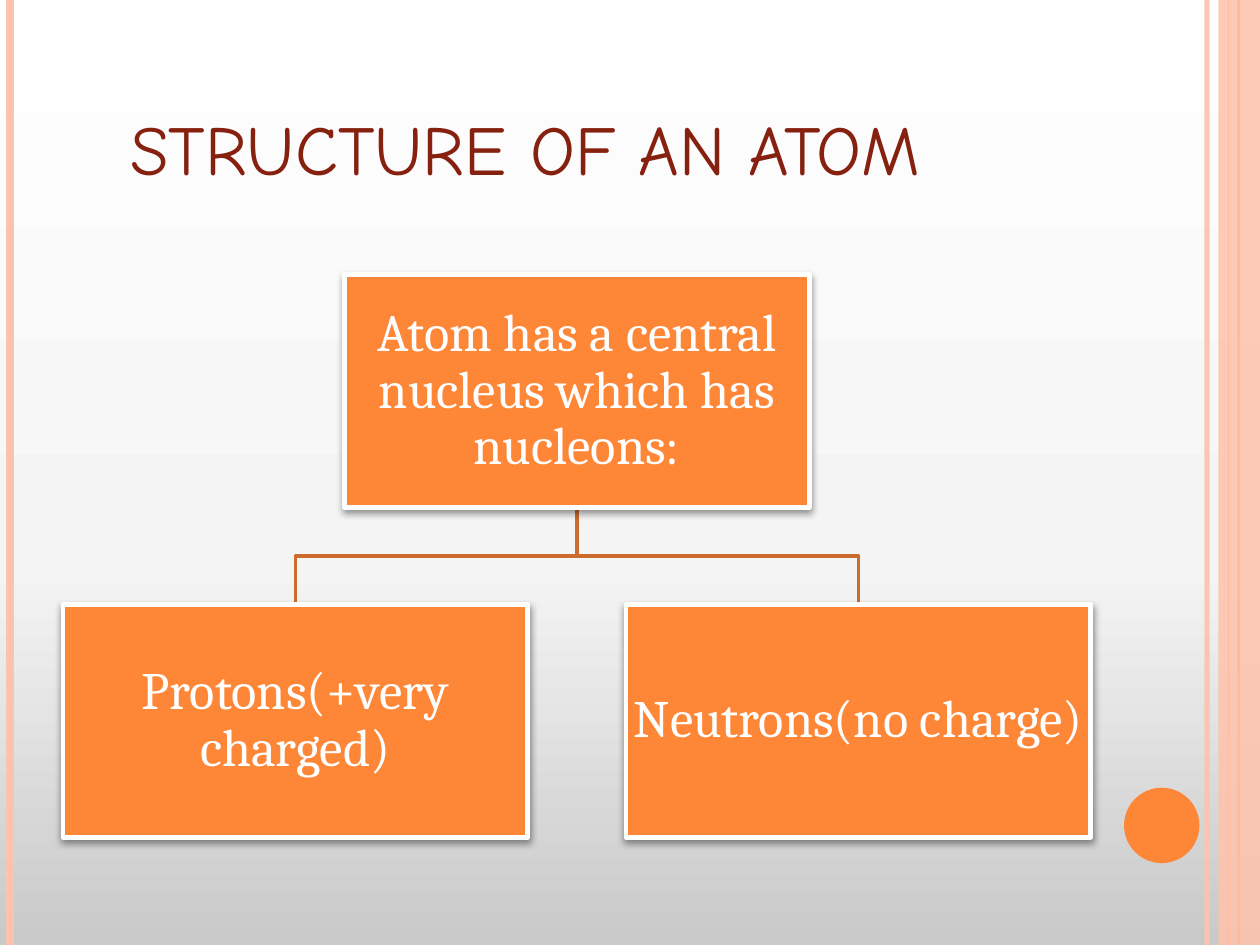
from lxml import etree
from pptx import Presentation, util as u
from pptx.dml.color import RGBColor
from pptx.enum import shapes, text
from pptx.oxml import parse_xml
from pptx.oxml.ns import qn

TITLE = "STRUCTURE OF AN ATOM"
ROOT = "Atom has a central nucleus which has nucleons:"
CHILDREN = ["Protons(+very charged)", "Neutrons(no charge)"]

THEME = {
    "accent": "FE8637", "pale": "FEC3AE", "link": "CB6B2C",
    "title": "862110", "white": "FFFFFF",
    "title_font": "Comic Neue", "body_font": "Cambria",
    "title_size": 40, "body_size": 30,
    "background": [(0, "C9C9C9"), (40, "F4F4F4"), (100, "FFFFFF")],
}
PAGE_W, PAGE_H = 25.4, 19.05
RULES = [(24.33, "pale", 3, 93), (0.2, "pale", 4.5, 100),
         (24.97, "accent", 1.5, 100), (24.77, "accent", 0.75, 100)]
BOX_W, BOX_H = 9.37, 4.69
LEFT, GAP = 1.27, 1.98
ROOT_TOP, CHILD_TOP = 5.54, 12.19
NS = 'xmlns:a="http://schemas.openxmlformats.org/drawingml/2006/main"'
SHADOW = (f'<a:effectLst {NS}><a:outerShdw blurRad="50800" dist="25400" '
          'dir="5400000" rotWithShape="0"><a:srgbClr val="000000">'
          '<a:alpha val="40000"/></a:srgbClr></a:outerShdw></a:effectLst>')


def rgb(name):
    return RGBColor.from_string(THEME[name])


def apply(obj, values):
    for name, value in values.items():
        setattr(obj, name, value)


def set_alpha(sp, percent):
    for color in sp._element.spPr.iter(qn("a:srgbClr")):
        etree.SubElement(color, qn("a:alpha"), val=str(percent * 1000))


def set_line(sp, color, width):
    sp.line.color.rgb = rgb(color)
    sp.line.width = u.Pt(width)


def set_background(s):
    fill = s.background.fill
    fill.gradient()
    fill.gradient_angle = 90
    stops = next(s._element.iter(qn("a:gsLst")))
    for stop in list(stops):
        stops.remove(stop)
    for pos, color in THEME["background"]:
        gs = etree.SubElement(stops, qn("a:gs"), pos=str(pos * 1000))
        etree.SubElement(gs, qn("a:srgbClr"), val=color)


def add_filled(s, kind, box, color):
    sp = s.shapes.add_shape(kind, *map(u.Cm, box))
    sp.shadow.inherit = False
    sp.fill.solid()
    sp.fill.fore_color.rgb = rgb(color)
    sp.line.fill.background()
    return sp


def add_decor(s):
    for x, color, width, alpha in RULES:
        sp = s.shapes.add_connector(shapes.MSO_CONNECTOR.STRAIGHT,
                                    u.Cm(x), 0, u.Cm(x), u.Cm(PAGE_H))
        set_line(sp, color, width)
        etree.SubElement(sp._element.spPr, qn("a:effectLst"))
        if alpha < 100:
            set_alpha(sp, alpha)
    band = add_filled(s, shapes.MSO_SHAPE.RECTANGLE,
                      (24.56, 0, PAGE_W - 24.56, PAGE_H), "pale")
    set_alpha(band, 87)
    add_filled(s, shapes.MSO_SHAPE.OVAL, (22.66, 15.88, 1.52, 1.52), "accent")


def set_text(sp, content, frame, para, font, color):
    tf = sp.text_frame
    apply(tf, {"word_wrap": True, "auto_size": text.MSO_AUTO_SIZE.NONE, **frame})
    p = tf.paragraphs[0]
    apply(p, para)
    r = p.add_run()
    r.text = content
    apply(r.font, font)
    r.font.color.rgb = rgb(color)
    return p


def add_title(s):
    sp = s.shapes.title
    apply(sp, dict(zip(("left", "top", "width", "height"),
                       map(u.Cm, (1.27, 0.76, 20.75, 3.18)))))
    p = set_text(sp, TITLE, {"vertical_anchor": text.MSO_ANCHOR.BOTTOM},
                 {"alignment": text.PP_ALIGN.LEFT},
                 {"name": THEME["title_font"], "size": u.Pt(THEME["title_size"])},
                 "title")
    apply_indent = p._p.get_or_add_pPr()
    apply_indent.set("marL", str(u.Cm(1.1)))
    apply_indent.set("indent", "0")


def add_link(s, x1, y1, x2, y2):
    mid = (y1 + y2) / 2
    start, *rest = [(u.Cm(x), u.Cm(y))
                    for x, y in ((x1, y1), (x1, mid), (x2, mid), (x2, y2))]
    fb = s.shapes.build_freeform(*start)
    fb.add_line_segments(rest, close=False)
    sp = fb.convert_to_shape()
    sp.shadow.inherit = False
    sp.fill.background()
    set_line(sp, "link", 2)


def add_box(s, x, y, content):
    sp = add_filled(s, shapes.MSO_SHAPE.RECTANGLE, (x, y, BOX_W, BOX_H), "accent")
    set_line(sp, "white", 2.75)
    spPr = sp._element.spPr
    spPr.replace(spPr.find(qn("a:effectLst")), parse_xml(SHADOW))
    margins = {f"margin_{side}": u.Cm(0.05)
               for side in ("left", "top", "right", "bottom")}
    set_text(sp, content, {"vertical_anchor": text.MSO_ANCHOR.MIDDLE, **margins},
             {"alignment": text.PP_ALIGN.CENTER, "line_spacing": 0.9},
             {"name": THEME["body_font"], "size": u.Pt(THEME["body_size"])},
             "white")


def add_tree(s):
    step = BOX_W + GAP
    root_x = LEFT + step * (len(CHILDREN) - 1) / 2
    lefts = [LEFT + i * step for i in range(len(CHILDREN))]
    for x in lefts:
        add_link(s, root_x + BOX_W / 2, ROOT_TOP + BOX_H, x + BOX_W / 2, CHILD_TOP)
    add_box(s, root_x, ROOT_TOP, ROOT)
    for x, content in zip(lefts, CHILDREN):
        add_box(s, x, CHILD_TOP, content)


def main():
    prs = Presentation()
    apply(prs, {"slide_width": u.Cm(PAGE_W), "slide_height": u.Cm(PAGE_H)})
    s = prs.slides.add_slide(prs.slide_layouts[5])
    set_background(s)
    add_decor(s)
    add_title(s)
    add_tree(s)
    prs.save("out.pptx")


if __name__ == "__main__":
    main()
